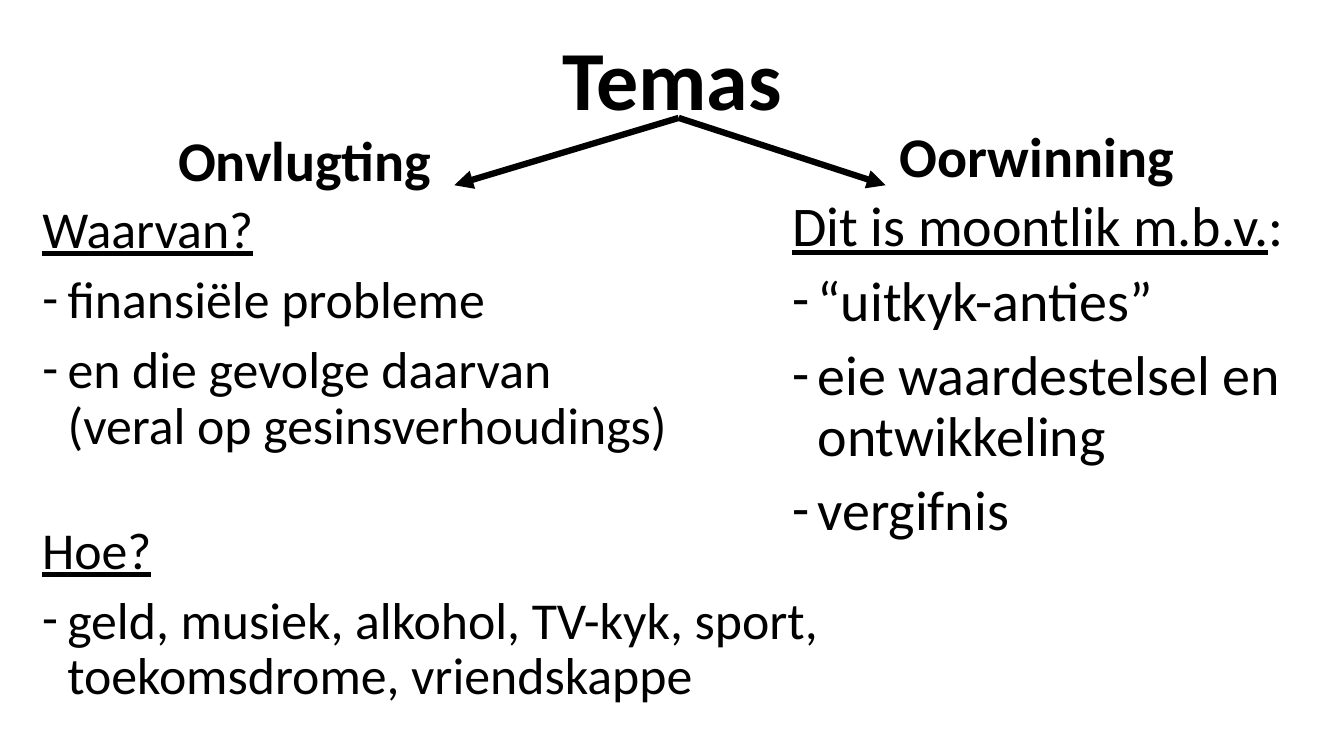
from lxml import etree
from pptx import Presentation
from pptx.dml.color import RGBColor
from pptx.enum.shapes import MSO_CONNECTOR
from pptx.enum.text import MSO_ANCHOR, MSO_AUTO_SIZE, PP_ALIGN
from pptx.oxml.ns import qn
from pptx.util import Inches, Pt

STRAIGHT = MSO_CONNECTOR.STRAIGHT
TOP, MIDDLE = MSO_ANCHOR.TOP, MSO_ANCHOR.MIDDLE
LEFT, CENTER, JUSTIFY = PP_ALIGN.LEFT, PP_ALIGN.CENTER, PP_ALIGN.JUSTIFY
NO_FIT = MSO_AUTO_SIZE.NONE

COLOURS = {"ink": "000000", "paper": "FFFFFF"}
FONT = "Calibri"
WIDTH, HEIGHT = Inches(13.33), Inches(7.5)
HANG = Inches(0.25)


def across(percent):
    return int(WIDTH * percent / 100)


def down(percent):
    return int(HEIGHT * percent / 100)


def colour(name):
    return RGBColor.from_string(COLOURS[name])


def place(box, area, anchor=TOP):
    """Put a text shape on an area given in percent of the slide."""
    left, top, width, height = area
    box.left, box.top = across(left), down(top)
    box.width, box.height = across(width), down(height)
    frame = box.text_frame
    frame.word_wrap = True
    frame.auto_size = NO_FIT
    frame.vertical_anchor = anchor
    return frame


def style_span(span, size, bold=False, underline=False):
    span.font.name, span.font.size = FONT, Pt(size)
    span.font.bold, span.font.underline = bold, underline
    span.font.color.rgb = colour("ink")


def style_para(para, align=LEFT, before=10, dash=False):
    para.alignment = align
    para.line_spacing = 0.9
    para.space_before = Pt(before)
    props = para._p.get_or_add_pPr()
    props.set("marL", str(HANG if dash else 0))
    props.set("indent", str(-HANG if dash else 0))
    if dash:
        etree.SubElement(props, qn("a:buFont")).set("typeface", FONT)
        etree.SubElement(props, qn("a:buChar")).set("char", "-")
    else:
        etree.SubElement(props, qn("a:buNone"))


def write_heading(box, text, area, size, align=LEFT, anchor=TOP, before=10):
    frame = place(box, area, anchor)
    frame.text = text
    para = frame.paragraphs[0]
    style_para(para, align, before)
    style_span(para.runs[0], size, bold=True)


def write_list(box, lead, items, area, size, ending=""):
    """Write an underlined lead line, then dashed items."""
    frame = place(box, area)
    frame.text = "\n".join([lead, *items])
    first, *rest = frame.paragraphs
    style_para(first, JUSTIFY)
    style_span(first.runs[0], size, underline=True)
    if ending:
        span = first.add_run()
        span.text = ending
        style_span(span, size)
    for para in rest:
        style_para(para, dash=True)
        style_span(para.runs[0], size)


def add_arrow(page, start, end):
    arrow = page.shapes.add_connector(
        STRAIGHT, across(start[0]), down(start[1]), across(end[0]), down(end[1]))
    arrow.line.color.rgb = colour("ink")
    arrow.line.width = Pt(4.5)
    etree.SubElement(arrow.line._get_or_add_ln(), qn("a:tailEnd")).set("type", "triangle")
    etree.SubElement(arrow._element.spPr, qn("a:effectLst"))


def main():
    deck = Presentation()
    deck.slide_width, deck.slide_height = WIDTH, HEIGHT
    page = deck.slides.add_slide(deck.slide_layouts.get_by_name("Comparison"))
    page.background.fill.solid()
    page.background.fill.fore_color.rgb = colour("paper")
    title, left_head, left_list, right_head, right_list = page.placeholders

    # Title and the two themes
    write_heading(title, "Temas", (0, 0, 100, 22), 60, CENTER, MIDDLE, before=0)
    write_heading(left_head, "Onvlugting", (12.5, 16.9, 22.7, 13), 40)
    write_heading(right_head, "Oorwinning", (66.2, 16.4, 33.8, 13), 40)

    # Arrows from the title to each theme
    for tip in (33.8, 65.9):
        add_arrow(page, (50.5, 15.6), (tip, 24.5))

    # Escape: from what, and how
    write_list(left_list, "Waarvan?",
               ["finansiële probleme",
                "en die gevolge daarvan (veral op gesinsverhoudings)"],
               (2.4, 26.3, 48.4, 38.1), 37)
    write_list(page.shapes.add_textbox(0, 0, 0, 0), "Hoe?",
               ["geld, musiek, alkohol, TV-kyk, sport, toekomsdrome, vriendskappe"],
               (2.4, 68.7, 63.8, 31.3), 37)

    # Victory: what makes it possible
    write_list(right_list, "Dit is moontlik m.b.v.",
               ["“uitkyk-anties”", "eie waardestelsel en ontwikkeling", "vergifnis"],
               (58.2, 25.6, 41.8, 51.3), 40, ending=":")

    deck.save("out.pptx")


if __name__ == "__main__":
    main()
